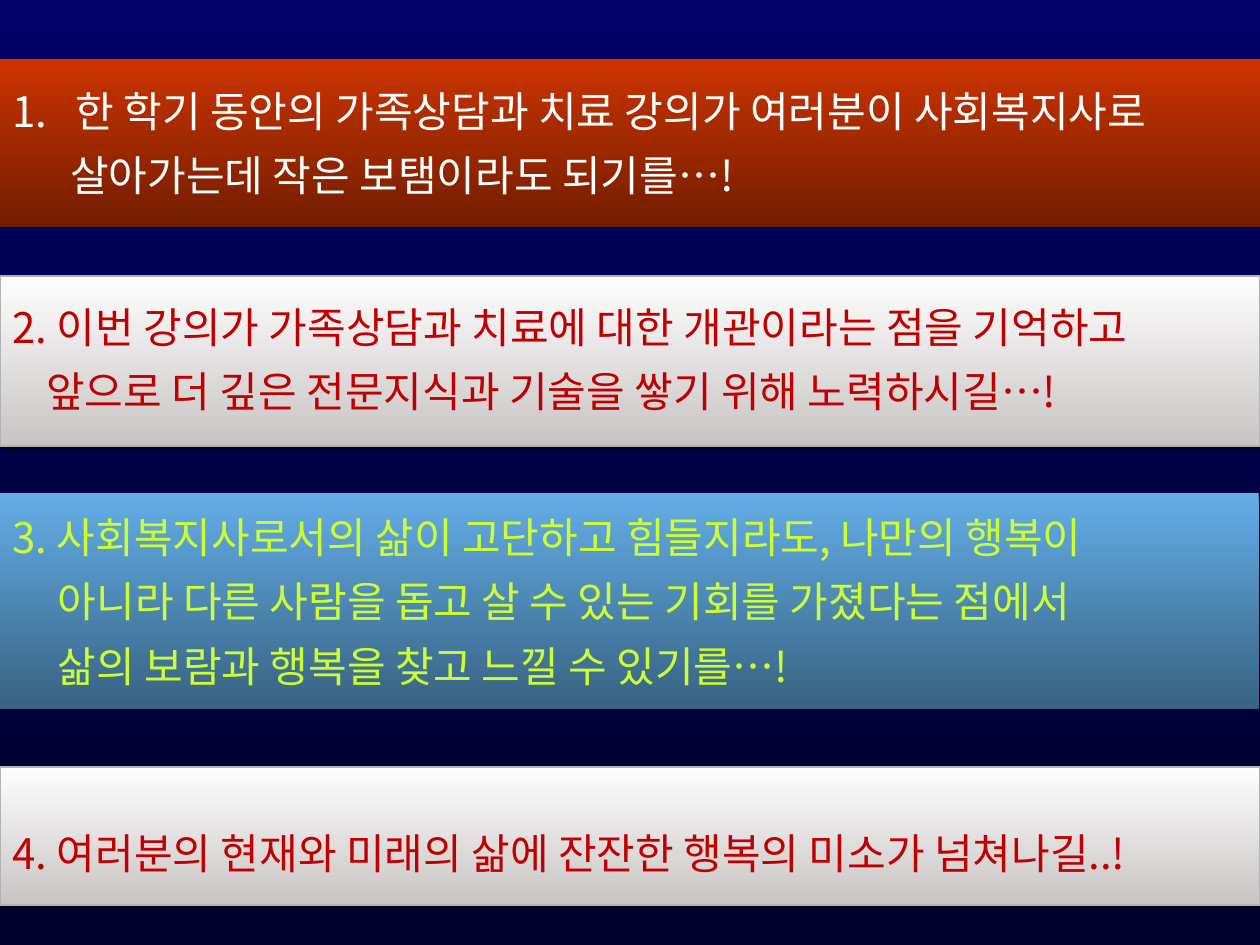
from lxml import etree
from pptx import Presentation
from pptx.dml.color import RGBColor
from pptx.enum.shapes import MSO_SHAPE
from pptx.enum.text import MSO_ANCHOR, PP_ALIGN
from pptx.oxml import parse_xml
from pptx.oxml.ns import nsdecls, qn
from pptx.util import Inches, Pt

FONT = "Noto Sans CJK KR"
NAVY = RGBColor(0x00, 0x00, 0x66)
MIDNIGHT = RGBColor(0x00, 0x00, 0x2B)
ORANGE = RGBColor(0xCC, 0x33, 0x00)
BROWN = RGBColor(0x72, 0x1D, 0x00)
SKY = RGBColor(0x63, 0xAE, 0xE7)
STEEL = RGBColor(0x38, 0x62, 0x82)
PEARL = RGBColor(0xFD, 0xFD, 0xFD)
SILVER = RGBColor(0xC9, 0xC5, 0xC4)
GRAY = RGBColor(0xB2, 0xB2, 0xB2)
WHITE = RGBColor(0xFF, 0xFF, 0xFF)
RED = RGBColor(0xC0, 0x00, 0x00)
LIME = RGBColor(0xCC, 0xFF, 0x33)

SHADOW = (
    f'<a:effectLst {nsdecls("a")}><a:outerShdw blurRad="0" dist="53340" dir="2700000">'
    '<a:srgbClr val="000000"><a:alpha val="30000"/></a:srgbClr>'
    '</a:outerShdw></a:effectLst>'
)


def fill_downward(fill, top_color, bottom_color):
    fill.gradient()
    fill.gradient_angle = 270
    for stop, color in zip(fill.gradient_stops, (top_color, bottom_color)):
        stop.color.rgb = color


def add_band(slide, box, top_color, bottom_color):
    band = slide.shapes.add_shape(MSO_SHAPE.RECTANGLE, *map(Inches, box))
    band.shadow.inherit = False
    fill_downward(band.fill, top_color, bottom_color)
    band.line.fill.background()
    return band


def add_raised_band(slide, box):
    band = add_band(slide, box, PEARL, SILVER)
    band.line.color.rgb = GRAY
    band.line.width = Pt(1)
    properties = band._element.spPr
    properties.replace(properties.find(qn("a:effectLst")), parse_xml(SHADOW))


def write_wish(frame, lines, color, indent=0, spacing=None, numbered=False):
    frame.word_wrap = True
    for index, line in enumerate(lines):
        paragraph = frame.paragraphs[0] if index == 0 else frame.add_paragraph()
        paragraph.alignment = PP_ALIGN.LEFT
        if spacing:
            paragraph.line_spacing = spacing
        else:
            paragraph.space_before = paragraph.space_after = Pt(4)
        properties = paragraph._p.get_or_add_pPr()
        if index:
            properties.set("marL", str(Inches(indent)))
        elif numbered:
            properties.set("marL", str(Inches(0.5)))
            properties.set("indent", str(Inches(-0.5)))
            etree.SubElement(properties, qn("a:buFont"), typeface=FONT)
            etree.SubElement(properties, qn("a:buAutoNum"), type="arabicPeriod")
        run = paragraph.add_run()
        run.text = line
        run.font.size = Pt(24)
        run.font.name = FONT
        run.font.color.rgb = color
        etree.SubElement(run._r.get_or_add_rPr(), qn("a:ea"), typeface=FONT)


def add_band_wish(slide, box, colors, lines, text_color, **layout):
    band = add_band(slide, box, *colors)
    band.text_frame.vertical_anchor = MSO_ANCHOR.MIDDLE
    write_wish(band.text_frame, lines, text_color, **layout)


def add_raised_wish(slide, box, text_box, lines, **layout):
    add_raised_band(slide, box)
    wish = slide.shapes.add_textbox(*map(Inches, text_box))
    write_wish(wish.text_frame, lines, RED, **layout)


def main():
    deck = Presentation()
    deck.slide_width, deck.slide_height = Inches(10), Inches(7.5)
    slide = deck.slides.add_slide(deck.slide_layouts[6])
    fill_downward(slide.background.fill, NAVY, MIDNIGHT)

    add_band_wish(slide, (0, 0.47, 10, 1.33), (ORANGE, BROWN), [
        "한 학기 동안의 가족상담과 치료 강의가 여러분이 사회복지사로",
        "살아가는데 작은 보탬이라도 되기를…!",
    ], WHITE, indent=0.46, numbered=True)
    add_raised_wish(slide, (0, 2.19, 10, 1.35), (0, 2.34, 10, 1.02), [
        "2. 이번 강의가 가족상담과 치료에 대한 개관이라는 점을 기억하고",
        "앞으로 더 깊은 전문지식과 기술을 쌓기 위해 노력하시길…!",
    ], indent=0.27)
    add_band_wish(slide, (0, 3.91, 9.99, 1.72), (SKY, STEEL), [
        "3. 사회복지사로서의 삶이 고단하고 힘들지라도, 나만의 행복이",
        "아니라 다른 사람을 돕고 살 수 있는 기회를 가졌다는 점에서",
        "삶의 보람과 행복을 찾고 느낄 수 있기를…!",
    ], LIME, indent=0.36)
    add_raised_wish(slide, (0, 6.09, 10, 1.09), (0, 6.32, 10, 0.71), [
        "4. 여러분의 현재와 미래의 삶에 잔잔한 행복의 미소가 넘쳐나길..!",
    ], spacing=1.5)

    deck.save("out.pptx")


if __name__ == "__main__":
    main()
